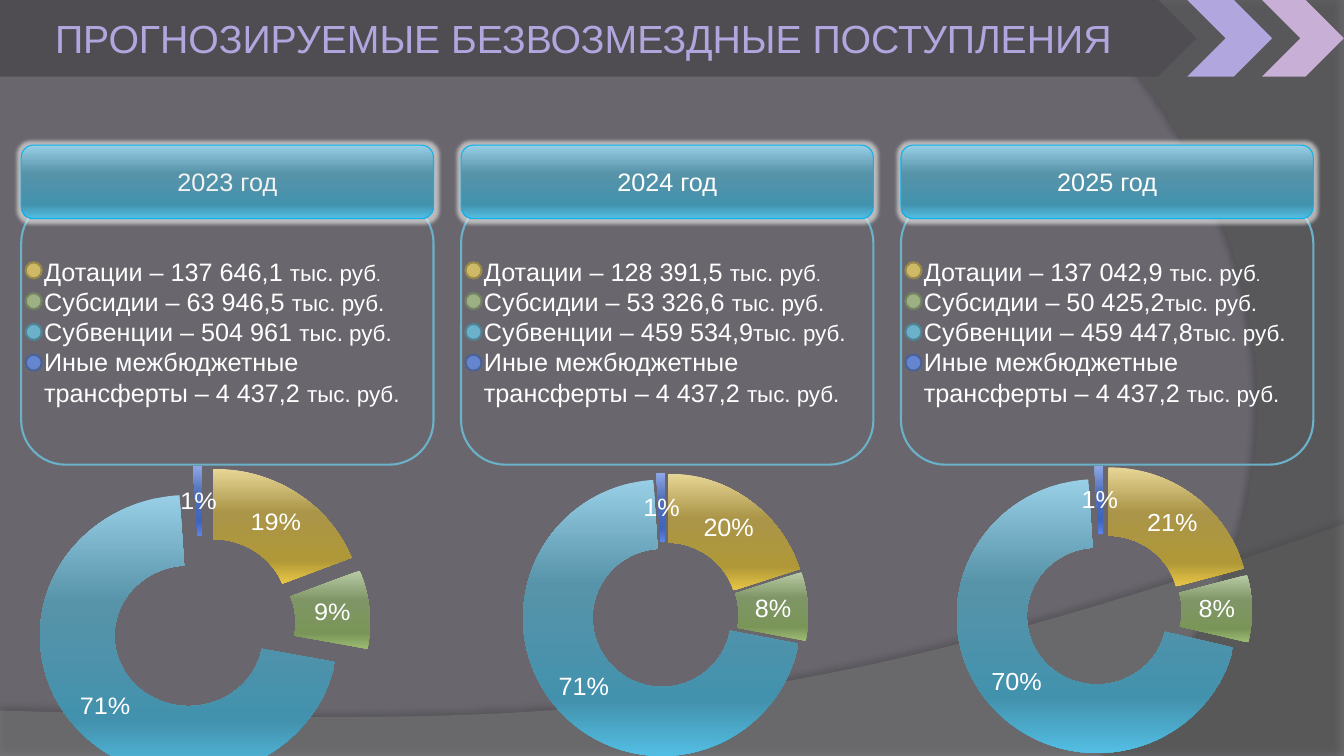
import copy

import pptx
import pptx.chart.data
import pptx.dml.color
import pptx.enum.chart
import pptx.enum.shapes
import pptx.enum.text
import pptx.oxml
import pptx.oxml.ns
import pptx.util

SHAPES = pptx.enum.shapes.MSO_SHAPE
ALIGN = pptx.enum.text.PP_ALIGN
MIDDLE = pptx.enum.text.MSO_ANCHOR.MIDDLE
WIDTH, HEIGHT = pptx.util.Inches(13.333), pptx.util.Inches(7.5)

COLORS = {
    "back": "69676D", "wave": "7F7F7F", "side": "5E5E5E", "banner": "4F4D52",
    "lilac": "B2A6DF", "pink": "C8AFD6", "white": "FFFFFF", "black": "000000",
    "pale": "F2F2F2", "card": "6BB1C9", "header": "0AB3EC",
}
KINDS = [
    {"dot": "CEB966", "edge": "98894B", "shades": ["E8D696", "AA9548", "B09838", "E8C645"]},
    {"dot": "9CB084", "edge": "738262", "shades": ["B9CBA5", "7F9566", "7A9558", "9DBB74"]},
    {"dot": "6BB1C9", "edge": "4F8395", "shades": ["98CFE6", "5793A9", "4392AD", "53BEE3"]},
    {"dot": "6585CF", "edge": "4B6299", "shades": ["8FA8E6", "5270B9", "3F64BC", "5C86EA"]},
]
SHADE_STOPS = [0, 0.38, 0.8, 1]
UNIT = "тыс. руб."
TRANSFERS = "Иные межбюджетные трансферты – 4 437,2 "
YEARS = [
    {"title": "2023 год", "color": "pale",
     "lines": ["Дотации – 137 646,1 ", "Субсидии – 63 946,5 ", "Субвенции – 504 961 ", TRANSFERS],
     "shares": [19, 9, 71, 1], "explosion": 25,
     "chart": (0.9, 28.95, 43.33), "plot": (0.053, 0, 0.765, 0.909)},
    {"title": "2024 год", "color": "white",
     "lines": ["Дотации – 128 391,5 ", "Субсидии – 53 326,6 ", "Субвенции – 459 534,9", TRANSFERS],
     "shares": [20, 8, 71, 1], "explosion": 6,
     "chart": (1.39, 26.7, 38.4), "plot": (0.095, 0.039, 0.843, 0.957)},
    {"title": "2025 год", "color": "white",
     "lines": ["Дотации – 137 042,9 ", "Субсидии – 50 425,2", "Субвенции – 459 447,8", TRANSFERS],
     "shares": [21, 8, 71, 1], "explosion": 12,
     "chart": (0, 29.85, 38), "plot": (0.155, 0.024, 0.699, 0.976)},
]


def rgb(value):
    return pptx.dml.color.RGBColor.from_string(value)


def xml(markup):
    return pptx.oxml.parse_xml(markup.replace(">", " " + pptx.oxml.ns.nsdecls("a", "c") + ">", 1))


def place(box):
    left, top, width, height = box
    return [int(WIDTH * left / 100), int(HEIGHT * top / 100),
            int(WIDTH * width / 100), int(HEIGHT * height / 100)]


def write(paragraph, text, size=18, color="white", align=ALIGN.LEFT):
    paragraph.alignment = align
    run = paragraph.add_run()
    run.text = text
    run.font.size = pptx.util.Pt(size)
    run.font.name = "Arial"
    run.font.color.rgb = rgb(COLORS[color])


def paint(shape, fill=None, line=None, weight=1.5):
    shape.shadow.inherit = False
    if fill:
        shape.fill.solid()
        shape.fill.fore_color.rgb = rgb(fill)
    else:
        shape.fill.background()
    if line:
        shape.line.color.rgb = rgb(line)
        shape.line.width = pptx.util.Pt(weight)
    else:
        shape.line.fill.background()


def shade(fill, shades):
    fill.gradient()
    fill.gradient_angle = 270
    first = fill.gradient_stops[0]._gs
    for _ in shades[2:]:
        first.addnext(copy.deepcopy(first))
    for stop, position, color in zip(fill.gradient_stops, SHADE_STOPS, shades):
        stop.position = position
        stop.color.rgb = rgb(color)


def add_effect(shape, markup):
    shape._element.spPr.find(pptx.oxml.ns.qn("a:effectLst")).append(xml(markup))


def add_shape(slide, kind, box, **style):
    shape = slide.shapes.add_shape(kind, *place(box))
    paint(shape, **style)
    return shape


def curve(start, first, second, end, steps=40):
    for step in range(1, steps + 1):
        t = step / steps
        weights = ((1 - t) ** 3, 3 * t * (1 - t) ** 2, 3 * t * t * (1 - t), t ** 3)
        yield tuple(sum(w * point[axis] for w, point in zip(weights, (start, first, second, end)))
                    for axis in (0, 1))


def add_backdrop(slide, corners, bend, color, opacity, shadow):
    points = [place((x, y, 0, 0))[:2] for x, y in corners + list(curve(corners[-1], *bend))]
    builder = slide.shapes.build_freeform(*points[0])
    builder.add_line_segments(points[1:], close=True)
    backdrop = builder.convert_to_shape()
    paint(backdrop, fill=COLORS[color])
    tint = backdrop._element.spPr.find(".//" + pptx.oxml.ns.qn("a:srgbClr"))
    tint.append(xml(f'<a:alpha val="{opacity * 1000}"/>'.replace("/>", "></a:alpha>")))
    alpha, distance, angle = shadow
    add_effect(backdrop, f'<a:outerShdw blurRad="50800" dist="{int(distance * 12700)}" '
                         f'dir="{angle * 60000}" algn="ctr" rotWithShape="0">'
                         f'<a:srgbClr val="{COLORS["black"]}"><a:alpha val="{alpha * 1000}"/>'
                         '</a:srgbClr></a:outerShdw>')


def add_banner(slide, height):
    banner = add_shape(slide, SHAPES.PENTAGON, (0, 0, 89.03, height), fill=COLORS["banner"])
    add_shape(slide, SHAPES.CHEVRON, (88.35, 0, 6.3, height), fill=COLORS["lilac"])
    add_shape(slide, SHAPES.CHEVRON, (93.9, 0, 6.1, height), fill=COLORS["pink"])
    title = slide.shapes.title
    title.left, title.top, title.width, title.height = place((0, 0, 86.8, height))
    title.text_frame.vertical_anchor = MIDDLE
    title.text_frame.auto_size = pptx.enum.text.MSO_AUTO_SIZE.NONE
    write(title.text_frame.paragraphs[0], "ПРОГНОЗИРУЕМЫЕ БЕЗВОЗМЕЗДНЫЕ ПОСТУПЛЕНИЯ",
          size=28, color="lilac", align=ALIGN.CENTER)
    banner._element.addnext(title._element)


def add_card(slide, year, box):
    left, top, width, height = box
    card = add_shape(slide, SHAPES.ROUNDED_RECTANGLE, (left, top + 7.07, width, height - 7.07),
                     line=COLORS["card"])
    frame = card.text_frame
    frame.word_wrap = True
    frame.vertical_anchor = MIDDLE
    for row, (line, kind) in enumerate(zip(year["lines"], KINDS)):
        paragraph = frame.add_paragraph() if row else frame.paragraphs[0]
        write(paragraph, line)
        write(paragraph, UNIT if row else UNIT[:-1], size=16)
        if not row:
            write(paragraph, ".", size=12)
        add_shape(slide, SHAPES.FLOWCHART_CONNECTOR,
                  (left + 0.33, top + 15.5 + 4.07 * row, 1.2, 2.13),
                  fill=kind["dot"], line=kind["edge"])
    header = add_shape(slide, SHAPES.ROUNDED_RECTANGLE, (left, top, width, 9.73),
                       line=COLORS["header"], weight=0.75)
    shade(header.fill, KINDS[2]["shades"])
    add_effect(header, f'<a:glow rad="63500"><a:srgbClr val="{COLORS["pale"]}">'
                       '<a:alpha val="60000"/></a:srgbClr></a:glow>')
    header.text_frame.vertical_anchor = MIDDLE
    write(header.text_frame.paragraphs[0], year["title"], color=year["color"], align=ALIGN.CENTER)


def add_doughnut(slide, year, left, top):
    offset, width, height = year["chart"]
    data = pptx.chart.data.CategoryChartData()
    data.categories = ["1", "2", "3", "4"]
    data.add_series("Series 1", year["shares"])
    chart = slide.shapes.add_chart(pptx.enum.chart.XL_CHART_TYPE.DOUGHNUT,
                                   *place((left + offset, top, width, height)), data).chart
    chart.has_title = False
    chart.has_legend = False
    chart.font.size = pptx.util.Pt(18)
    chart.font.name = "Arial"
    chart.font.color.rgb = rgb(COLORS["white"])
    plot = chart.plots[0]
    plot.has_data_labels = True
    labels = plot.data_labels
    labels.show_percentage = True
    labels.show_value = False
    labels.number_format = "0%"
    labels.number_format_is_linked = False
    series = plot.series[0]
    for index, kind in enumerate(KINDS):
        slice_format = series.points[index].format
        shade(slice_format.fill, kind["shades"])
        slice_format.line.fill.background()
    for slice_xml in series._element.findall(pptx.oxml.ns.qn("c:dPt")):
        slice_xml.find(pptx.oxml.ns.qn("c:spPr")).addprevious(
            xml(f'<c:explosion val="{year["explosion"]}"></c:explosion>'))
    plot._element.find(pptx.oxml.ns.qn("c:holeSize")).set("val", "50")
    area = plot._element.getparent()
    for old in area.findall(pptx.oxml.ns.qn("c:layout")):
        area.remove(old)
    sizes = "".join(f'<c:{key} val="{share}"/>' for key, share in zip("xywh", year["plot"]))
    area.insert(0, xml('<c:layout><c:manualLayout><c:layoutTarget val="inner"/>'
                       '<c:xMode val="edge"/><c:yMode val="edge"/>'
                       f'{sizes}</c:manualLayout></c:layout>'))


def main():
    deck = pptx.Presentation()
    deck.slide_width, deck.slide_height = WIDTH, HEIGHT
    slide = deck.slides.add_slide(deck.slide_layouts[5])
    slide.background.fill.solid()
    slide.background.fill.fore_color.rgb = rgb(COLORS["back"])
    add_backdrop(slide, [(0, 94), (0, 100), (100, 100), (100, 69.33)],
                 [(55.9, 97.2), (39.1, 95.87), (0, 94)], "wave", 45, (35, 3.5, 270))
    add_backdrop(slide, [(100, 0), (100, 100), (82.1, 100)],
                 [(93.45, 82.5), (101.8, 40), (80, 0)], "side", 40, (45, 4, 180))
    add_banner(slide, 10.13)
    for column, year in enumerate(YEARS):
        left = 1.58 + 32.73 * column
        add_card(slide, year, (left, 19.2, 30.68, 42.27))
        add_doughnut(slide, year, left, 61.6)
    deck.save("out.pptx")


if __name__ == "__main__":
    main()
